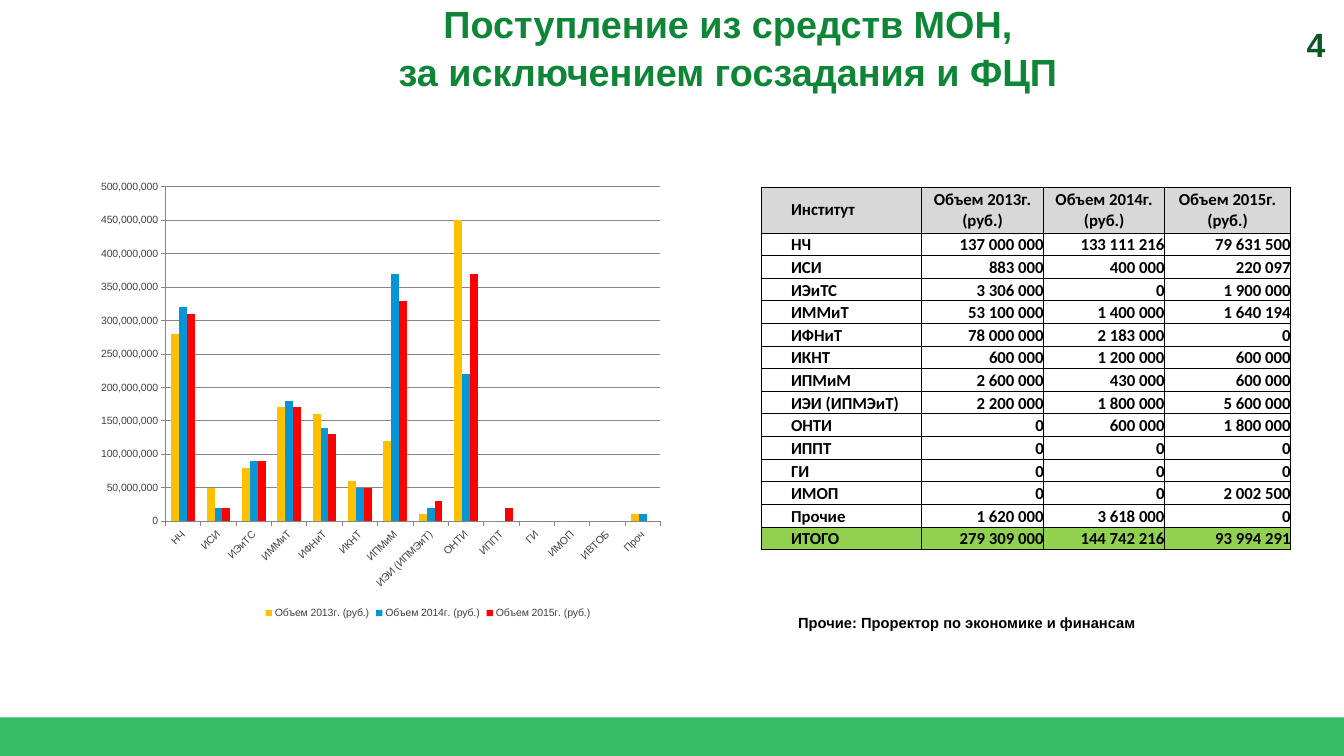
from dataclasses import dataclass

from lxml import etree
from pptx import Presentation
from pptx import util as u
from pptx.chart.data import CategoryChartData
from pptx.dml.color import RGBColor
from pptx.enum import chart as charts
from pptx.enum import shapes, text
from pptx.oxml import parse_xml
from pptx.oxml.ns import nsdecls, qn

ALIGN = text.PP_ALIGN
ANCHOR = text.MSO_ANCHOR


@dataclass(frozen=True)
class Theme:
    band: str = "36BD65"
    title: str = "0E8537"
    number: str = "095825"
    ink: str = "000000"
    chart_text: str = "424242"
    chart_line: str = "868686"
    header: str = "D8D8D8"
    total: str = "92D050"
    series: tuple = ("FFC000", "0696D7", "FF0000")
    body_font: str = "Arial"
    table_font: str = "Calibri"
    title_size: int = 36
    number_size: int = 32
    table_size: int = 16
    note_size: int = 14
    chart_size: int = 10


YEARS = [f"Объем {year}г. (руб.)" for year in (2013, 2014, 2015)]
CATEGORIES = ["НЧ", "ИСИ", "ИЭиТС", "ИММиТ", "ИФНиТ", "ИКНТ", "ИПМиМ",
              "ИЭИ (ИПМЭиТ)", "ОНТИ", "ИППТ", "ГИ", "ИМОП", "ИВТОБ", "Проч"]
# Chart values in tens of millions of roubles
CHART_UNIT = 10_000_000
CHART_VALUES = [
    [28, 5, 8, 17, 16, 6, 12, 1, 45, 0, 0, 0, 0, 1],
    [32, 2, 9, 18, 14, 5, 37, 2, 22, 0, 0, 0, 0, 1],
    [31, 2, 9, 17, 13, 5, 33, 3, 37, 2, 0, 0, 0, 0],
]
INCOME = [
    ("НЧ", 137000000, 133111216, 79631500),
    ("ИСИ", 883000, 400000, 220097),
    ("ИЭиТС", 3306000, 0, 1900000),
    ("ИММиТ", 53100000, 1400000, 1640194),
    ("ИФНиТ", 78000000, 2183000, 0),
    ("ИКНТ", 600000, 1200000, 600000),
    ("ИПМиМ", 2600000, 430000, 600000),
    ("ИЭИ (ИПМЭиТ)", 2200000, 1800000, 5600000),
    ("ОНТИ", 0, 600000, 1800000),
    ("ИППТ", 0, 0, 0),
    ("ГИ", 0, 0, 0),
    ("ИМОП", 0, 0, 2002500),
    ("Прочие", 1620000, 3618000, 0),
    ("ИТОГО", 279309000, 144742216, 93994291),
]


class SlideBuilder:
    def __init__(self, page, theme):
        self.page = page
        self.theme = theme

    def style(self, font, size, color, name, bold=True):
        font.size = u.Pt(size)
        font.name = name
        font.bold = bold
        font.color.rgb = RGBColor.from_string(color)

    def band(self, *place):
        bar = self.page.shapes.add_shape(
            shapes.MSO_SHAPE.RECTANGLE, *map(u.Cm, place))
        bar.shadow.inherit = False
        bar.fill.solid()
        bar.fill.fore_color.rgb = RGBColor.from_string(self.theme.band)
        bar.line.fill.background()

    def label(self, place, words, size, color, align=ALIGN.LEFT,
              anchor=ANCHOR.TOP, wrap=True, spacing=1.0):
        box = self.page.shapes.add_textbox(*map(u.Cm, place))
        frame = box.text_frame
        frame.word_wrap = wrap
        frame.vertical_anchor = anchor
        frame.text = words
        for para in frame.paragraphs:
            para.alignment = align
            para.line_spacing = spacing
            for span in para.runs:
                self.style(span.font, size, color, self.theme.body_font)

    def column_chart(self, place, categories, names, rows, colors):
        data = CategoryChartData(number_format="#,##0")
        data.categories = categories
        for name, values in zip(names, rows):
            data.add_series(name, [value * CHART_UNIT for value in values])
        chart = self.page.shapes.add_chart(
            charts.XL_CHART_TYPE.COLUMN_CLUSTERED, *map(u.Cm, place), data).chart
        self.style(chart.font, self.theme.chart_size, self.theme.chart_text,
                   self.theme.body_font, bold=False)
        chart.has_title = False
        chart.has_legend = True
        chart.legend.position = charts.XL_LEGEND_POSITION.BOTTOM
        chart.legend.include_in_layout = False

        # Columns
        plot = chart.plots[0]
        plot.gap_width = 150
        plot.overlap = 0
        plot.vary_by_categories = False
        for series, color in zip(plot.series, colors):
            series.invert_if_negative = False
            series.format.fill.solid()
            series.format.fill.fore_color.rgb = RGBColor.from_string(color)

        # Axes
        values, names_axis = chart.value_axis, chart.category_axis
        values.minimum_scale = 0
        values.maximum_scale = 50 * CHART_UNIT
        values.major_unit = 5 * CHART_UNIT
        values.has_major_gridlines = True
        values.tick_labels.number_format = "#,##0"
        values.tick_labels.number_format_is_linked = False
        for line in (values.format.line, names_axis.format.line,
                     values.major_gridlines.format.line):
            line.color.rgb = RGBColor.from_string(self.theme.chart_line)
            line.width = u.Pt(0.75)
        for axis in (values, names_axis):
            axis.major_tick_mark = charts.XL_TICK_MARK.OUTSIDE
        self.style(names_axis.tick_labels.font, self.theme.chart_size,
                   self.theme.chart_text, self.theme.body_font, bold=False)
        names_axis._element.find(qn("c:txPr")).find(qn("a:bodyPr")).set("rot", "-2700000")
        self.fix_plot_area(chart, x=0.15, y=0.05, w=0.66, h=0.73)

    def fix_plot_area(self, chart, **fractions):
        area = chart._chartSpace.chart.plotArea
        old = area.find(qn("c:layout"))
        if old is not None:
            area.remove(old)
        parts = '<c:layoutTarget val="inner"/><c:xMode val="edge"/><c:yMode val="edge"/>'
        parts += "".join(f'<c:{key} val="{value}"/>' for key, value in fractions.items())
        area.insert(0, parse_xml(
            f'<c:layout {nsdecls("c")}><c:manualLayout>{parts}</c:manualLayout></c:layout>'))

    def income_table(self, left, top, widths, header_height, row_height, rows):
        last = len(rows) - 1
        heights = [header_height] + [row_height] * last
        table = self.page.shapes.add_table(
            len(rows), len(widths), *map(u.Cm, (left, top, sum(widths), sum(heights)))).table
        for column, width in zip(table.columns, widths):
            column.width = u.Cm(width)
        fills = {0: self.theme.header, last: self.theme.total}
        for i, (row, height) in enumerate(zip(rows, heights)):
            table.rows[i].height = u.Cm(height)
            for j, value in enumerate(row):
                words = value if isinstance(value, str) else f"{value:,}".replace(",", " ")
                align = ALIGN.LEFT if j == 0 else ALIGN.RIGHT if i else ALIGN.CENTER
                anchor = ANCHOR.BOTTOM if i else ANCHOR.MIDDLE
                self.cell(table.cell(i, j), words, align, anchor, fills.get(i))

    def cell(self, cell, words, align, anchor, fill):
        cell.margin_left = cell.margin_right = cell.margin_top = cell.margin_bottom = 0
        cell.vertical_anchor = anchor
        cell.text_frame.text = words
        para = cell.text_frame.paragraphs[0]
        para.alignment = align
        if align == ALIGN.LEFT:
            para._p.get_or_add_pPr().set("marL", str(u.Cm(1)))
        self.style(para.runs[0].font, self.theme.table_size, self.theme.ink,
                   self.theme.table_font)
        for side in ("lnL", "lnR", "lnT", "lnB"):
            border = etree.SubElement(cell._tc.get_or_add_tcPr(), qn(f"a:{side}"),
                                      w=str(u.Pt(0.5)))
            solid = etree.SubElement(border, qn("a:solidFill"))
            etree.SubElement(solid, qn("a:srgbClr"), val=self.theme.ink)
        if fill:
            cell.fill.solid()
            cell.fill.fore_color.rgb = RGBColor.from_string(fill)
        else:
            cell.fill.background()


def main():
    deck = Presentation()
    deck.slide_width, deck.slide_height = u.Cm(45.16), u.Cm(25.4)
    theme = Theme()
    slide = SlideBuilder(deck.slides.add_slide(deck.slide_layouts[6]), theme)

    # Frame, title and page number
    slide.band(0, 24.1, 45.16, 1.3)
    slide.label((4.78, 0, 39.37, 3.1), "Поступление из средств МОН,\nза исключением госзадания и ФЦП",
                theme.title_size, theme.title, ALIGN.CENTER, ANCHOR.MIDDLE, spacing=1.06)
    slide.label((42.98, 0.69, 1.8, 1.63), "4", theme.number_size, theme.number, ALIGN.RIGHT)

    # Note, chart and table
    slide.label((26.57, 20.5, 11.94, 0.86), "Прочие: Проректор по экономике и финансам",
                theme.note_size, theme.ink, wrap=False)
    slide.column_chart((1.78, 5.51, 25.2, 15.39), CATEGORIES, YEARS, CHART_VALUES, theme.series)
    slide.income_table(25.58, 6.3, [5.38, 4.11, 4.06, 4.24], 1.52, 0.76,
                       [("Институт", *YEARS), *INCOME])
    deck.save("out.pptx")


if __name__ == "__main__":
    main()
